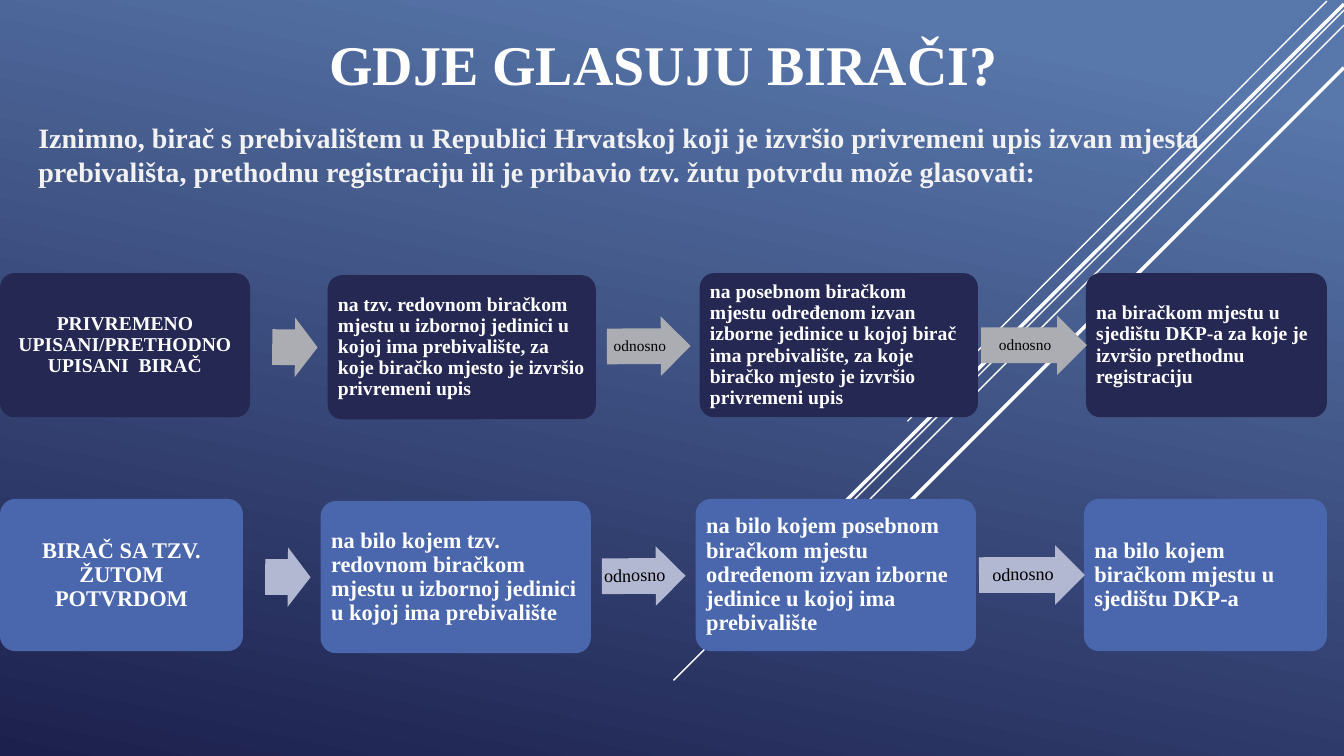
from dataclasses import dataclass

from lxml.etree import SubElement
from pptx import Presentation
from pptx.dml.color import RGBColor
from pptx.enum.shapes import MSO_CONNECTOR, MSO_SHAPE
from pptx.enum.text import MSO_ANCHOR as Anchor, MSO_AUTO_SIZE, PP_ALIGN as Align
from pptx.oxml.ns import qn
from pptx.util import Inches, Pt


@dataclass(frozen=True)
class Theme:
    font: str = "Times New Roman"
    sky: str = "5877AB"
    night: str = "1C204D"
    white: str = "FFFFFF"
    intro: str = "F2F2F2"
    black: str = "000000"
    title_size: int = 40
    intro_size: int = 20


@dataclass(frozen=True)
class Route:
    """One row of boxes: who votes, then the places where they may vote."""
    top: float
    height: float
    columns: tuple  # left and width of each box
    box_color: str
    arrow_color: str
    box_size: int
    arrow_size: int
    texts: tuple


THEME = Theme()
SLIDE_WIDTH, SLIDE_HEIGHT = 13.33, 7.5

# Start, end, weight
RAYS = (
    ((13.16, 0.01), (9, 4.18), 1),
    ((13.33, 0.1), (6.68, 6.75), 1),
    ((13.33, 0.25), (7.91, 5.67), 1),
    ((13.33, 0.04), (8.02, 5.34), 2.5),
    ((13.33, 0.67), (8.58, 5.42), 2.5),
)

BOX_DROPS = (0, 0.02, 0, 0)
BOX_INSETS = (0.06, 0.06, 0.06, 0.06)
# Gap after the box, length, drop below the row's middle, rotation, label
ARROWS = (
    (0.22, 0.45, 0.02, 0.4, ""),
    (0.11, 0.83, 0.01, -0.3, "odnosno"),
    (0.03, 1.05, 0, -0.1, "odnosno"),
)
ARROW_HEIGHT = 0.59

ROUTES = (
    Route(
        2.71, 1.43,
        ((0, 2.48), (3.25, 2.66), (6.94, 2.76), (10.77, 2.39)),
        "242852", "ACADB3", 14, 11,
        (
            "PRIVREMENO UPISANI/PRETHODNO UPISANI  BIRAČ",
            "na tzv. redovnom biračkom mjestu u izbornoj jedinici u kojoj ima "
            "prebivalište, za koje biračko mjesto je izvršio privremeni upis",
            "na posebnom biračkom mjestu određenom izvan izborne jedinice u kojoj "
            "birač ima prebivalište, za koje biračko mjesto je izvršio privremeni upis",
            "na biračkom mjestu u sjedištu DKP-a za koje je izvršio prethodnu "
            "registraciju",
        ),
    ),
    Route(
        4.95, 1.51,
        ((0, 2.41), (3.18, 2.68), (6.9, 2.78), (10.75, 2.41)),
        "4A66AC", "B2B8D2", 16, 13,
        (
            "BIRAČ SA TZV. ŽUTOM POTVRDOM",
            "na bilo kojem tzv. redovnom biračkom mjestu u izbornoj jedinici u "
            "kojoj ima prebivalište",
            "na bilo kojem posebnom biračkom mjestu određenom izvan izborne "
            "jedinice u kojoj ima prebivalište",
            "na bilo kojem biračkom mjestu u sjedištu DKP-a",
        ),
    ),
)


def write(shape, text, size, color, bold=True, align=Align.LEFT,
          anchor=Anchor.MIDDLE, insets=(0.1, 0.05, 0.1, 0.05), spacing=0.9,
          wrap=True):
    frame = shape.text_frame
    frame.text = text
    frame.word_wrap = wrap
    frame.auto_size = MSO_AUTO_SIZE.NONE
    frame.vertical_anchor = anchor
    (frame.margin_left, frame.margin_top,
     frame.margin_right, frame.margin_bottom) = map(Inches, insets)
    paragraph = frame.paragraphs[0]
    paragraph.alignment = align
    paragraph.line_spacing = spacing
    font = paragraph.font
    font.name, font.size, font.bold = THEME.font, Pt(size), bold
    font.color.rgb = RGBColor.from_string(color)


def place(shape, left, top, width, height):
    shape.left, shape.top = Inches(left), Inches(top)
    shape.width, shape.height = Inches(width), Inches(height)


def paint_background(slide):
    fill = slide.background.fill
    fill.gradient()
    fill.gradient_angle = 258
    for stop, position, color in zip(fill.gradient_stops, (0.1, 1),
                                     (THEME.sky, THEME.night)):
        stop.position = position
        stop.color.rgb = RGBColor.from_string(color)


def add_ray(slide, start, end, weight):
    """Draw a diagonal line behind the title and everything after it."""
    ray = slide.shapes.add_connector(
        MSO_CONNECTOR.STRAIGHT, *map(Inches, start + end))
    ray.line.color.rgb = RGBColor.from_string(THEME.white)
    ray.line.width = Pt(weight)
    SubElement(ray.element.spPr, qn("a:effectLst"))
    slide.shapes.title.element.addprevious(ray.element)


def add_flat_shape(slide, preset, bounds, color, adjustments):
    shape = slide.shapes.add_shape(preset, *map(Inches, bounds))
    shape.shadow.inherit = False
    shape.fill.solid()
    shape.fill.fore_color.rgb = RGBColor.from_string(color)
    shape.line.fill.background()
    for index, value in enumerate(adjustments):
        shape.adjustments[index] = value
    return shape


def add_boxes(slide, route):
    for index, ((left, width), drop, text) in enumerate(
            zip(route.columns, BOX_DROPS, route.texts)):
        box = add_flat_shape(
            slide, MSO_SHAPE.ROUNDED_RECTANGLE,
            (left, route.top + drop, width, route.height),
            route.box_color, (0.1,))
        write(box, text, route.box_size, THEME.white, insets=BOX_INSETS,
              align=Align.LEFT if index else Align.CENTER)


def add_arrows(slide, route):
    middle = route.top + route.height / 2
    for (left, width), (gap, length, drop, rotation, label) in zip(
            route.columns, ARROWS):
        arrow = add_flat_shape(
            slide, MSO_SHAPE.RIGHT_ARROW,
            (left + width + gap, middle + drop - ARROW_HEIGHT / 2,
             length, ARROW_HEIGHT),
            route.arrow_color, (0.6, 0.5))
        arrow.rotation = rotation
        if label:
            write(arrow, label, route.arrow_size, THEME.black, bold=False,
                  align=Align.CENTER, insets=(0, 0, 0, 0), wrap=False)


def main():
    deck = Presentation()
    deck.slide_width, deck.slide_height = Inches(SLIDE_WIDTH), Inches(SLIDE_HEIGHT)
    slide = deck.slides.add_slide(deck.slide_layouts.get_by_name("Title Slide"))
    paint_background(slide)
    for ray in RAYS:
        add_ray(slide, *ray)

    title, intro = slide.placeholders
    place(title, 0, 0.2, 13.16, 0.81)
    write(title, "GDJE GLASUJU BIRAČI?", THEME.title_size, THEME.white,
          align=Align.CENTER, anchor=Anchor.BOTTOM, spacing=1)
    place(intro, 0.28, 1.15, 12.5, 1.15)
    write(intro,
          "Iznimno, birač s prebivalištem u Republici Hrvatskoj koji je izvršio "
          "privremeni upis izvan mjesta prebivališta, prethodnu registraciju ili "
          "je pribavio tzv. žutu potvrdu može glasovati:",
          THEME.intro_size, THEME.intro, anchor=Anchor.TOP, spacing=1)

    for route in ROUTES:
        add_boxes(slide, route)
        add_arrows(slide, route)
    deck.save("out.pptx")


if __name__ == "__main__":
    main()
